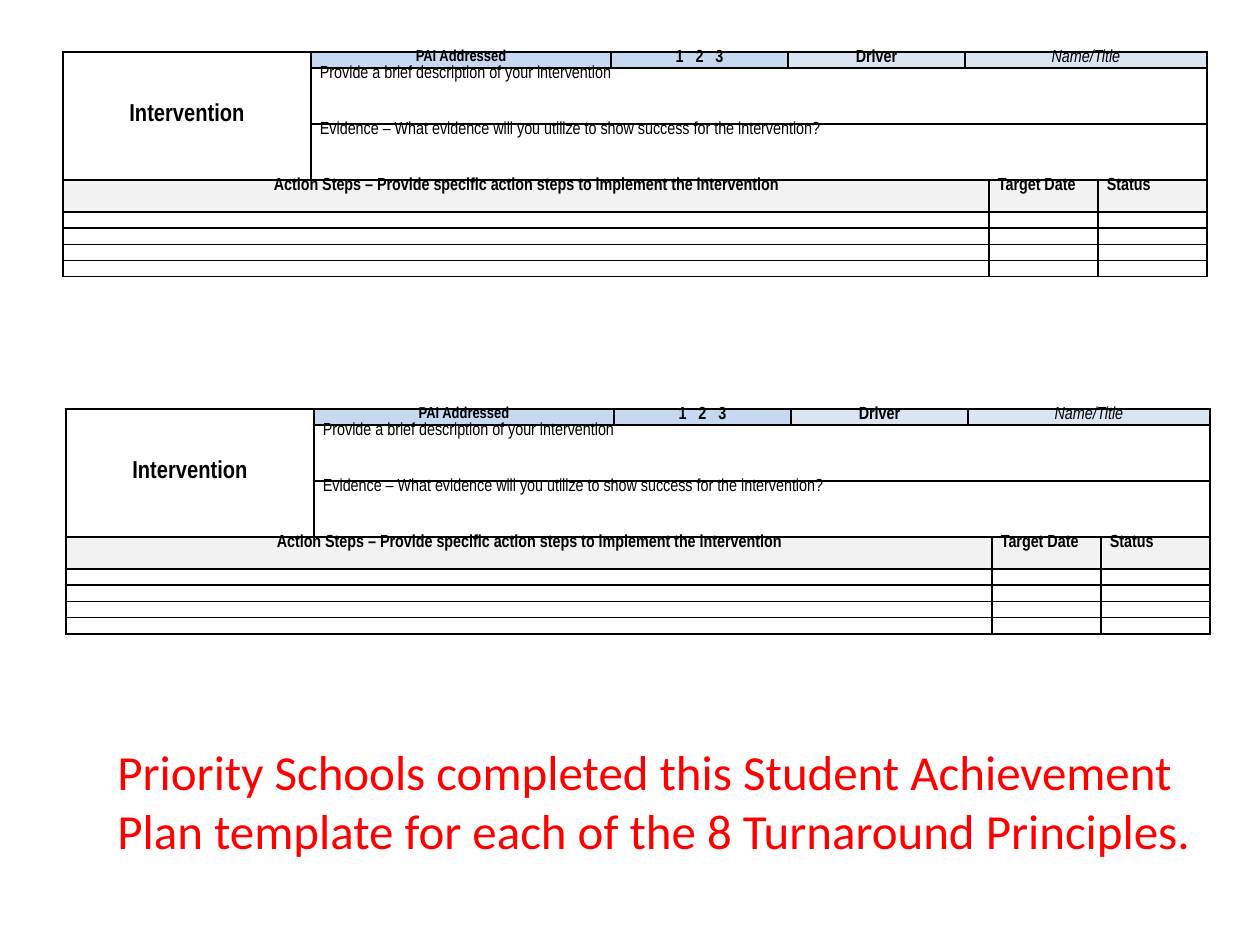
from lxml import etree
from pptx import Presentation
from pptx.dml.color import RGBColor
from pptx.enum.text import MSO_ANCHOR, PP_ALIGN
from pptx.oxml.ns import qn
from pptx.util import Emu, Pt

CENTER, LEFT = PP_ALIGN.CENTER, PP_ALIGN.LEFT
MIDDLE, TOP = MSO_ANCHOR.MIDDLE, MSO_ANCHOR.TOP
PX = 914400 // 126
COLORS = {"black": "000000", "red": "FF0000", "blue": "C6D9F1",
          "pale": "DBE5F1", "gray": "F2F2F2"}

COLUMNS = [248, 300, 177, 177, 24, 109, 109]
ROWS = [16, 56, 56, 32, 16, 16, 16, 16]
TABLE_CORNERS = [(63, 52), (66, 409)]
MERGES = [(0, 0, 2, 0), (0, 4, 0, 6), (1, 1, 1, 6), (2, 1, 2, 6)]
MERGES += [(row, 0, row, 4) for row in range(3, len(ROWS))]
CELLS = {
    (0, 0): dict(text="Intervention", size=14, bold=True, align=CENTER, anchor=MIDDLE),
    (0, 1): dict(text="PAI Addressed", size=9, bold=True, align=CENTER, fill="blue"),
    (0, 2): dict(text="1   2   3", bold=True, align=CENTER, fill="blue"),
    (0, 3): dict(text="Driver", bold=True, align=CENTER, fill="pale"),
    (0, 4): dict(text="Name/Title", italic=True, align=CENTER, fill="pale"),
    (1, 1): dict(text="Provide a brief description of your intervention"),
    (2, 1): dict(text="Evidence – What evidence will you utilize to show success for the intervention?"),
    (3, 0): dict(text="Action Steps – Provide specific action steps to implement the intervention",
                 bold=True, align=CENTER, fill="gray"),
    (3, 5): dict(text="Target Date", bold=True, fill="gray"),
    (3, 6): dict(text="Status", bold=True, fill="gray"),
}
MESSAGE = ("Priority Schools completed this Student Achievement Plan template "
           "for each of the 8 Turnaround Principles.")


def px(value):
    return Emu(value * PX)


def write(frame, text, size=10, font="Arial Narrow", color="black", bold=False,
          italic=False, align=LEFT, spacing=0.8):
    para = frame.paragraphs[0]
    para.alignment = align
    para.line_spacing = spacing
    if not text:
        end = etree.SubElement(para._p, qn("a:endParaRPr"), sz=str(size * 100))
        etree.SubElement(end, qn("a:latin"), typeface=font)
        return
    span = para.add_run()
    span.text = text
    span.font.size = Pt(size)
    span.font.name = font
    span.font.bold = bold
    span.font.italic = italic
    span.font.color.rgb = RGBColor.from_string(COLORS[color])


def add_borders(cell):
    properties = cell._tc.get_or_add_tcPr()
    for index, side in enumerate(("lnL", "lnR", "lnT", "lnB")):
        line = etree.Element(qn("a:" + side), w=str(Pt(1)))
        fill = etree.SubElement(line, qn("a:solidFill"))
        etree.SubElement(fill, qn("a:srgbClr"), val=COLORS["black"])
        properties.insert(index, line)


def format_cell(cell, text="", fill=None, anchor=TOP, **style):
    cell.margin_left = cell.margin_right = px(9)
    cell.margin_top = cell.margin_bottom = 0
    cell.vertical_anchor = anchor
    if fill:
        cell.fill.solid()
        cell.fill.fore_color.rgb = RGBColor.from_string(COLORS[fill])
    else:
        cell.fill.background()
    add_borders(cell)
    write(cell.text_frame, text, **style)


def add_plan(page, left, top):
    table = page.shapes.add_table(len(ROWS), len(COLUMNS), px(left), px(top),
                                  px(sum(COLUMNS)), px(sum(ROWS))).table
    table.first_row = table.horz_banding = False
    for column, width in zip(table.columns, COLUMNS):
        column.width = px(width)
    for row, height in zip(table.rows, ROWS):
        row.height = px(height)
    for row in range(len(ROWS)):
        for column in range(len(COLUMNS)):
            format_cell(table.cell(row, column), **CELLS.get((row, column), {}))
    for top_row, first, bottom_row, last in MERGES:
        table.cell(top_row, first).merge(table.cell(bottom_row, last))


def main():
    deck = Presentation()
    deck.slide_width, deck.slide_height = px(1260), px(945)
    page = deck.slides.add_slide(deck.slide_layouts[6])
    for left, top in reversed(TABLE_CORNERS):
        add_plan(page, left, top)
    box = page.shapes.add_textbox(px(105), px(735), px(1103), px(131))
    box.text_frame.word_wrap = True
    write(box.text_frame, MESSAGE, size=28, font="Calibri", color="red", spacing=1.0)
    deck.save("out.pptx")


if __name__ == "__main__":
    main()
